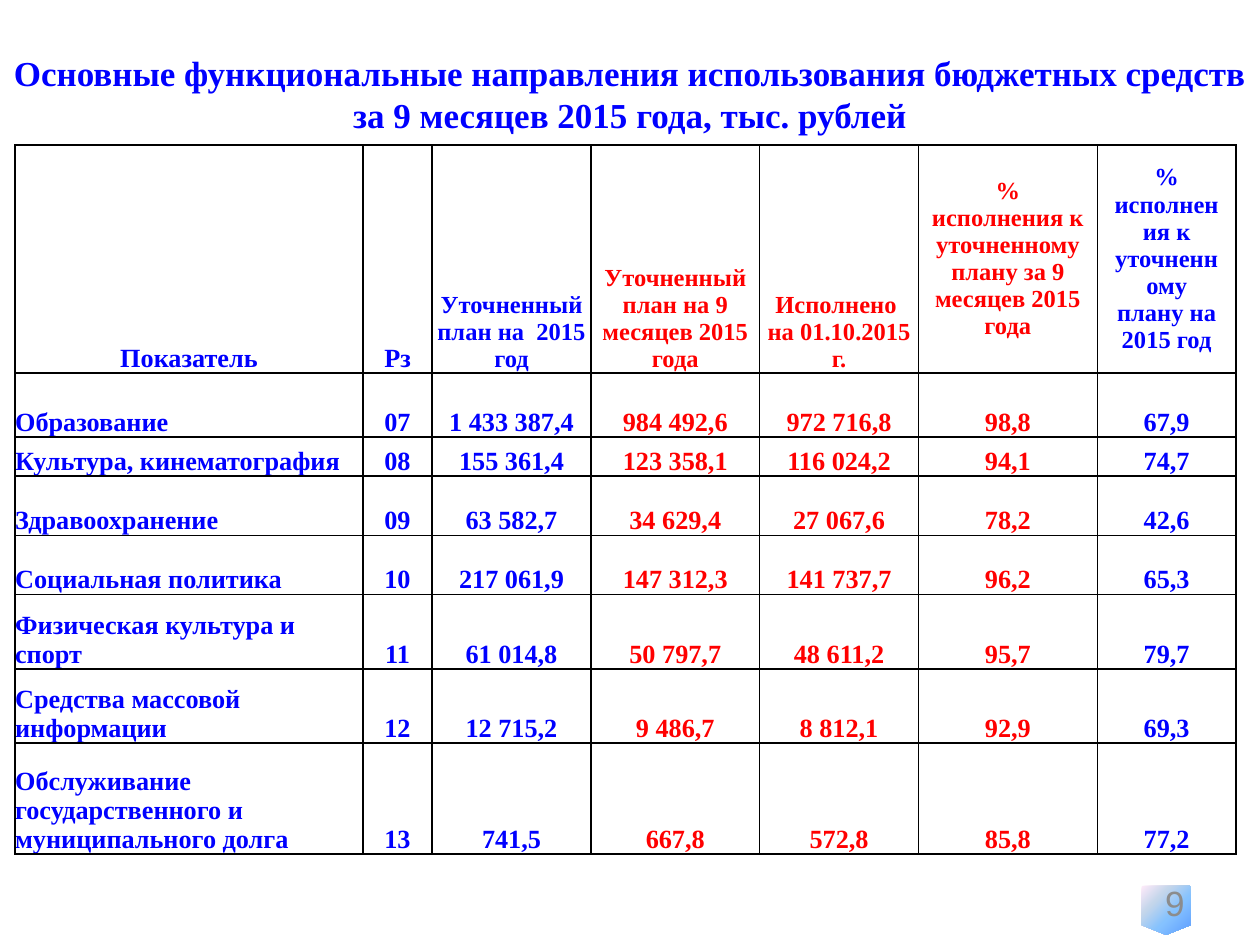
from dataclasses import dataclass

from pptx import Presentation
from pptx.dml.color import RGBColor
from pptx.enum.shapes import MSO_SHAPE as Preset
from pptx.enum.text import MSO_ANCHOR as Anchor, MSO_AUTO_SIZE as AutoSize, PP_ALIGN as Align
from pptx.oxml import parse_xml
from pptx.oxml.ns import nsdecls
from pptx.util import Inches, Pt


@dataclass(frozen=True)
class Theme:
    serif: str = "Times New Roman"
    sans: str = "Arial"
    blue: str = "0000FF"
    red: str = "FF0000"
    gray: str = "8C8C8C"
    border: str = "000000"
    badge: tuple = ((0, "5E9EFF"), (40, "85C2FF"), (70, "C4D6EB"), (100, "FFEBFA"))
    title_size: int = 20
    body_size: int = 15
    header_size: int = 14


THEME = Theme()
TITLE = ("Основные функциональные направления использования бюджетных средств "
         "за 9 месяцев 2015 года, тыс. рублей")
HEADERS = (
    "Показатель", "Рз", "Уточненный план на  2015 год",
    "Уточненный план на 9 месяцев 2015 года", "Исполнено  на 01.10.2015 г.",
    "% исполнения к уточненному плану за 9 месяцев 2015 года",
    "% исполнения к уточненному плану на 2015 год",
)
BUDGET = (
    ("Образование", "07", "1 433 387,4", "984 492,6", "972 716,8", "98,8", "67,9"),
    ("Культура, кинематография", "08", "155 361,4", "123 358,1", "116 024,2", "94,1", "74,7"),
    ("Здравоохранение", "09", "63 582,7", "34 629,4", "27 067,6", "78,2", "42,6"),
    ("Социальная политика", "10", "217 061,9", "147 312,3", "141 737,7", "96,2", "65,3"),
    ("Физическая культура и спорт", "11", "61 014,8", "50 797,7", "48 611,2", "95,7", "79,7"),
    ("Средства массовой информации", "12", "12 715,2", "9 486,7", "8 812,1", "92,9", "69,3"),
    ("Обслуживание государственного и муниципального долга", "13",
     "741,5", "667,8", "572,8", "85,8", "77,2"),
)
COLUMN_WIDTHS = (2.76, 0.55, 1.26, 1.34, 1.26, 1.42, 1.1)
ROW_HEIGHTS = (1.81, 0.51, 0.31, 0.47, 0.47, 0.59, 0.59, 0.88)
NINE_MONTH_COLUMNS = (3, 4, 5)
PERCENT_COLUMNS = (5, 6)


def write(frame, text, size, color, align, font=THEME.serif, bold=True):
    """Put one formatted paragraph into a text frame."""
    frame.text = text
    paragraph = frame.paragraphs[0]
    paragraph.alignment = align
    for run in paragraph.runs:
        run.font.name = font
        run.font.size = Pt(size)
        run.font.bold = bold
        run.font.color.rgb = RGBColor.from_string(color)


def add_title(slide):
    """Place and format the slide title."""
    title = slide.shapes.title
    title.left, title.top = Inches(0), Inches(0.36)
    title.width, title.height = Inches(10), Inches(0.77)
    frame = title.text_frame
    write(frame, TITLE, THEME.title_size, THEME.blue, Align.CENTER)
    frame.word_wrap = True
    frame.vertical_anchor = Anchor.TOP
    frame.auto_size = AutoSize.SHAPE_TO_FIT_TEXT


def add_borders(cell):
    """Draw a thin line on all four sides of a cell."""
    properties = cell._tc.get_or_add_tcPr()
    for position, side in enumerate("LRTB"):
        properties.insert(position, parse_xml(
            f'<a:ln{side} {nsdecls("a")} w="{Pt(1)}"><a:solidFill>'
            f'<a:srgbClr val="{THEME.border}"/></a:solidFill></a:ln{side}>'))


def fill_cell(cell, text, row, column):
    """Write and format one cell according to its row and column."""
    is_header = row == 0
    size = THEME.header_size if is_header and column > 1 else THEME.body_size
    color = THEME.red if column in NINE_MONTH_COLUMNS else THEME.blue
    align = Align.CENTER if is_header or column else Align.LEFT
    write(cell.text_frame, text, size, color, align)
    if is_header and column in PERCENT_COLUMNS:
        cell.vertical_anchor = Anchor.MIDDLE
    else:
        cell.vertical_anchor = Anchor.BOTTOM
        cell.margin_left = cell.margin_right = cell.margin_top = cell.margin_bottom = 0
    cell.fill.background()
    add_borders(cell)


def add_budget_table(slide):
    """Build the table of spending by budget section."""
    table = slide.shapes.add_table(
        len(ROW_HEIGHTS), len(COLUMN_WIDTHS), Inches(0.12), Inches(1.15),
        Inches(sum(COLUMN_WIDTHS)), Inches(sum(ROW_HEIGHTS))).table
    table.first_row = table.horz_banding = False
    for column, width in zip(table.columns, COLUMN_WIDTHS):
        column.width = Inches(width)
    for row, height in zip(table.rows, ROW_HEIGHTS):
        row.height = Inches(height)
    for row, values in enumerate((HEADERS, *BUDGET)):
        for column, text in enumerate(values):
            fill_cell(table.cell(row, column), text, row, column)


def add_page_badge(slide):
    """Draw the pentagon badge with its radial gradient."""
    badge = slide.shapes.add_shape(
        Preset.FLOWCHART_OFFPAGE_CONNECTOR, Inches(9.06), Inches(7.03), Inches(0.39), Inches(0.39))
    stops = "".join(f'<a:gs pos="{position * 1000}"><a:srgbClr val="{color}"/></a:gs>'
                    for position, color in THEME.badge)
    badge._element.spPr.insert(2, parse_xml(
        f'<a:gradFill {nsdecls("a")}><a:gsLst>{stops}</a:gsLst><a:path path="circle">'
        '<a:fillToRect l="100000" t="100000"/></a:path></a:gradFill>'))
    badge.line.fill.background()
    badge.shadow.inherit = False


def add_page_number(slide):
    """Write the page number over the badge."""
    number = slide.shapes.add_textbox(Inches(7.17), Inches(6.95), Inches(2.33), Inches(0.43))
    frame = number.text_frame
    frame.word_wrap = True
    frame.vertical_anchor = Anchor.MIDDLE
    write(frame, "9", THEME.title_size, THEME.gray, Align.RIGHT, THEME.sans, False)


def main():
    """Build the budget slide and save it."""
    deck = Presentation()
    deck.slide_width, deck.slide_height = Inches(10), Inches(7.5)
    slide = deck.slides.add_slide(deck.slide_layouts[5])
    add_page_badge(slide)
    add_page_number(slide)
    add_budget_table(slide)
    add_title(slide)
    deck.save("out.pptx")


if __name__ == "__main__":
    main()
